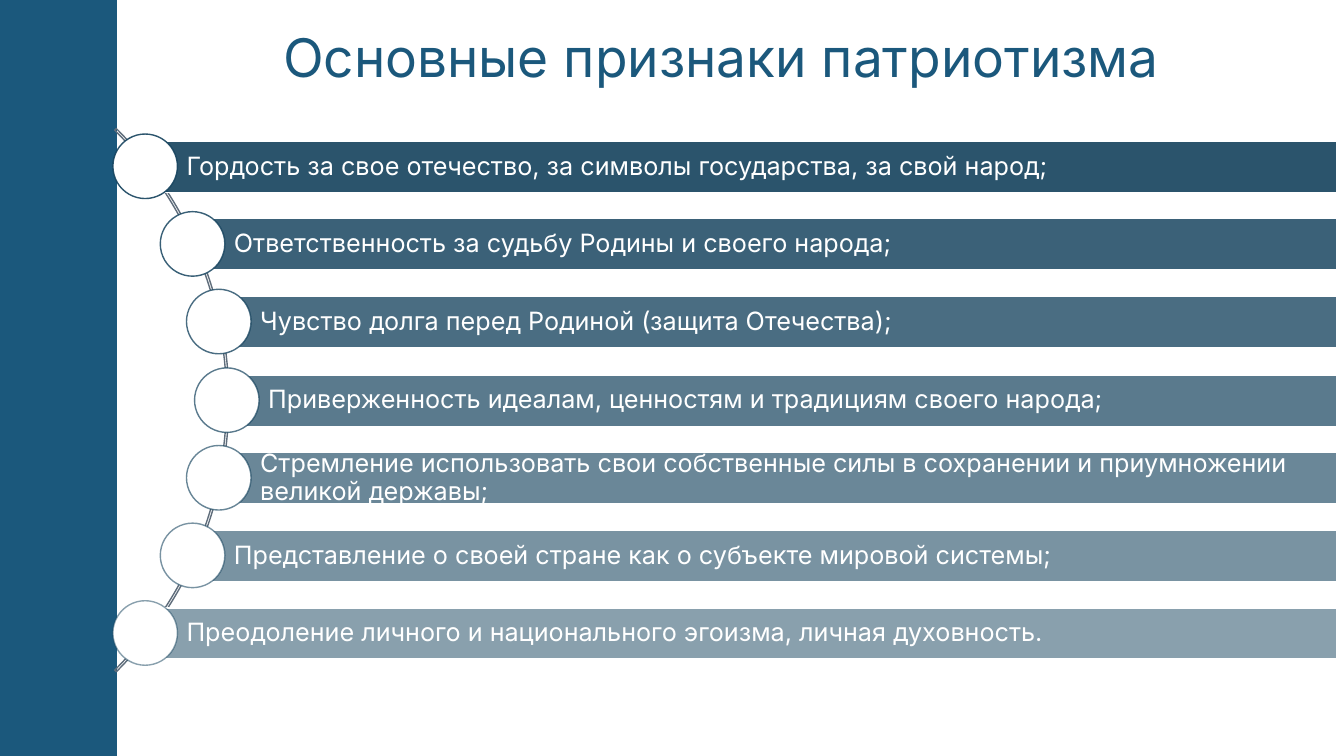
from lxml.etree import SubElement
from pptx import Presentation
from pptx.dml.color import RGBColor
from pptx.enum.shapes import MSO_SHAPE as Shape
from pptx.enum.text import MSO_ANCHOR as Anchor, PP_ALIGN as Align
from pptx.oxml.ns import qn
from pptx.util import Pt

PX = 9144
BLUE = RGBColor(0x1B, 0x58, 0x7C)
NAVY = RGBColor(0x14, 0x42, 0x5D)
SLATE = RGBColor(0x5F, 0x6D, 0x7B)
WHITE = RGBColor(0xFF, 0xFF, 0xFF)

SIGNS = [
    "Гордость за свое отечество, за символы государства, за свой народ;",
    "Ответственность за судьбу Родины и своего народа;",
    "Чувство долга перед Родиной (защита Отечества);",
    "Приверженность идеалам, ценностям и традициям своего народа;",
    "Стремление использовать свои собственные силы в сохранении и приумножении великой державы;",
    "Представление о своей стране как о субъекте мировой системы;",
    "Преодоление личного и национального эгоизма, личная духовность.",
]
BAR_LEFTS = [144, 191, 217, 225]
BAR_RIGHT, BAR_HEIGHT = 1326, 51
FIRST_TOP, LAST_TOP = 140, 603
FIRST_ALPHA, LAST_ALPHA = 90, 50
CIRCLE = 64


class Page:
    font = "Inter"

    def __init__(self, deck):
        self.shapes = deck.slides.add_slide(deck.slide_layouts[6]).shapes

    def fade(self, shape, route, percent):
        color = shape.element.spPr.find("/".join(qn(tag) for tag in route))
        SubElement(color, qn("a:alpha"), val=str(percent * 1000))

    def shape(self, kind, left, top, width, height, fill=None, line=None):
        shape = self.shapes.add_shape(kind, left * PX, top * PX, width * PX, height * PX)
        shape.shadow.inherit = False
        if fill is None:
            shape.fill.background()
        else:
            shape.fill.solid()
            shape.fill.fore_color.rgb = fill
        if line is None:
            shape.line.fill.background()
        else:
            shape.line.color.rgb = line
            shape.line.width = Pt(1)
        return shape

    def label(self, shape, text, size, color, align, anchor, insets):
        frame = shape.text_frame
        frame.word_wrap = True
        frame.vertical_anchor = anchor
        left, top, right, bottom = (inset * PX for inset in insets)
        frame.margin_left, frame.margin_top = left, top
        frame.margin_right, frame.margin_bottom = right, bottom
        para = frame.paragraphs[0]
        para.text = text
        para.alignment = align
        para.line_spacing = 0.9
        para.font.name = self.font
        para.font.size = Pt(size)
        para.font.color.rgb = color

    def title(self, text, left, top, width, height):
        box = self.shapes.add_textbox(left * PX, top * PX, width * PX, height * PX)
        self.label(box, text, 38, BLUE, Align.CENTER, Anchor.TOP, (0, 0, 0, 0))

    def arc(self, left, top, size):
        arc = self.shape(Shape.BLOCK_ARC, left, top, size, size, line=SLATE)
        for index, value in enumerate((189, 27, 0.003)):
            arc.adjustments[index] = value

    def sign(self, text, left, top, alpha):
        bar = self.shape(Shape.RECTANGLE, left, top, BAR_RIGHT - left, BAR_HEIGHT, NAVY, WHITE)
        self.fade(bar, ("a:solidFill", "a:srgbClr"), alpha)
        self.label(bar, text, 18, WHITE, Align.LEFT, Anchor.MIDDLE, (41, 5, 5, 5))
        circle_top = top + (BAR_HEIGHT - CIRCLE) // 2
        circle = self.shape(Shape.OVAL, left - CIRCLE // 2, circle_top, CIRCLE, CIRCLE, WHITE, NAVY)
        self.fade(circle, ("a:ln", "a:solidFill", "a:srgbClr"), alpha)


def main():
    deck = Presentation()
    deck.slide_width, deck.slide_height = 1333 * PX, 750 * PX
    page = Page(deck)
    page.shape(Shape.RECTANGLE, 0, 0, 116, 750, BLUE)
    page.title("Основные признаки патриотизма ", 185, 31, 1076, 116)
    page.arc(-535, 16, 762)
    last = len(SIGNS) - 1
    for row, text in enumerate(SIGNS):
        left = BAR_LEFTS[min(row, last - row)]
        top = FIRST_TOP + round((LAST_TOP - FIRST_TOP) * row / last)
        alpha = FIRST_ALPHA + round((LAST_ALPHA - FIRST_ALPHA) * row / last)
        page.sign(text, left, top, alpha)
    deck.save("out.pptx")


if __name__ == "__main__":
    main()
